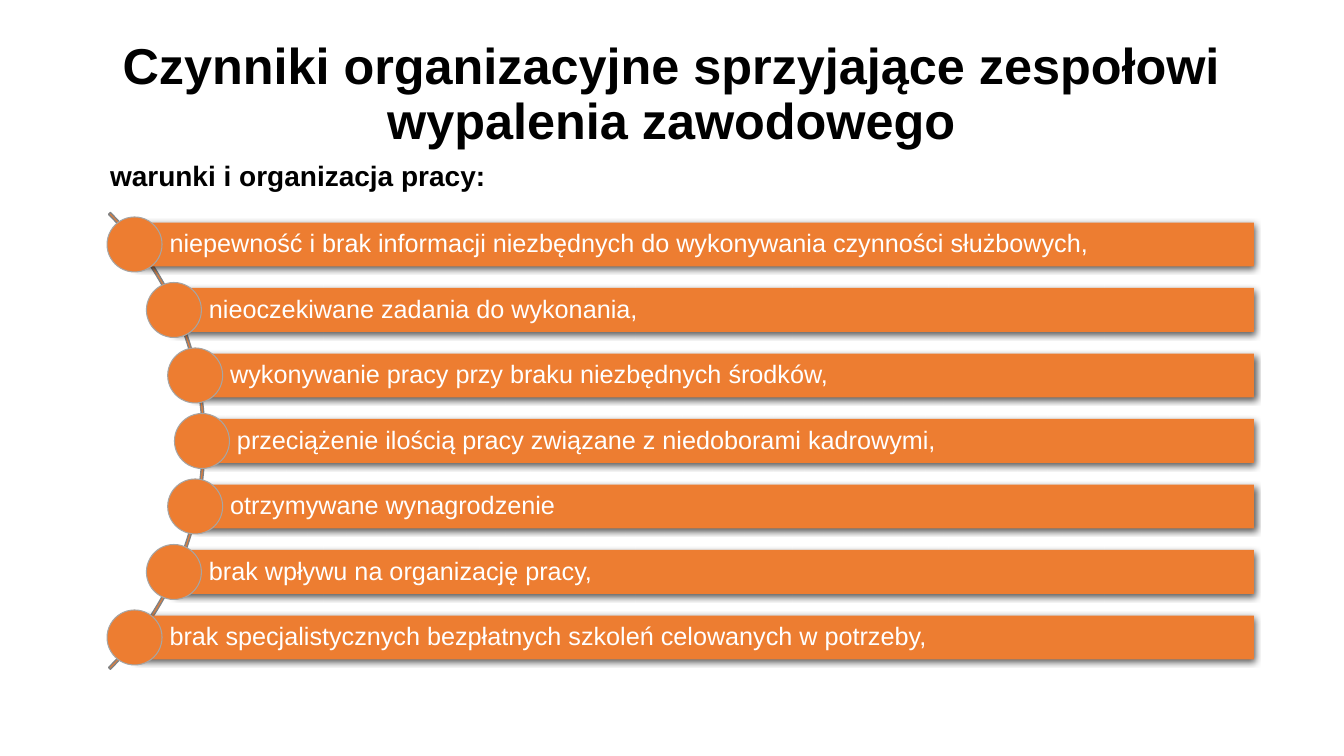
from dataclasses import dataclass
from math import sqrt

from lxml import etree
from pptx import Presentation, util as u
from pptx.dml.color import RGBColor
from pptx.enum import shapes, text
from pptx.oxml import ns

PX = 914400 / 100.8


@dataclass(frozen=True)
class Theme:
    font: str = "Arial"
    ink: str = "000000"
    paper: str = "FFFFFF"
    fill: str = "ED7D31"
    ring: str = "A5A5A5"
    arc: str = "828282"
    title: int = 36
    lead: int = 20
    item: int = 18


T = Theme()
TITLE = "Czynniki organizacyjne sprzyjające zespołowi wypalenia zawodowego"
LEAD = "warunki i organizacja pracy:"
ITEMS = [
    "niepewność i brak informacji niezbędnych do wykonywania czynności służbowych,",
    "nieoczekiwane zadania do wykonania,",
    "wykonywanie pracy przy braku niezbędnych środków,",
    "przeciążenie ilością pracy związane z niedoborami kadrowymi,",
    "otrzymywane wynagrodzenie",
    "brak wpływu na organizację pracy,",
    "brak specjalistycznych bezpłatnych szkoleń celowanych w potrzeby,",
]


def px(n):
    return u.Emu(round(n * PX))


def rgb(code):
    return RGBColor.from_string(code)


def put(shape, words, size, color=T.ink, bold=False, align=text.PP_ALIGN.LEFT,
        anchor=text.MSO_ANCHOR.MIDDLE, pads=(10, 5, 10, 5)):
    """Write one paragraph into a shape."""
    frame = shape.text_frame
    frame.word_wrap = True
    frame.auto_size = text.MSO_AUTO_SIZE.NONE
    frame.vertical_anchor = anchor
    (frame.margin_left, frame.margin_top,
     frame.margin_right, frame.margin_bottom) = map(px, pads)
    frame.text = words
    para = frame.paragraphs[0]
    para.alignment, para.line_spacing = align, 0.9
    para.space_before = u.Pt(0)
    font = para.font
    font.name, font.size, font.bold = T.font, u.Pt(size), bold
    font.color.rgb = rgb(color)
    return para


def place(shape, box):
    shape.left, shape.top, shape.width, shape.height = map(px, box)


def draw(slide, kind, box, line=None, width=1):
    shape = slide.shapes.add_shape(kind, *map(px, box))
    shape.shadow.inherit = False
    shape.fill.solid()
    shape.fill.fore_color.rgb = rgb(T.fill)
    if line:
        shape.line.color.rgb = rgb(line)
        shape.line.width = u.Pt(width)
    else:
        shape.line.fill.background()
    return shape


def shade(shape):
    """Drop a soft shadow straight down."""
    effects = shape._element.spPr.find(ns.qn("a:effectLst"))
    drop = etree.SubElement(effects, ns.qn("a:outerShdw"), blurRad="57150",
                            dist="19050", dir="5400000", algn="ctr", rotWithShape="0")
    tint = etree.SubElement(drop, ns.qn("a:srgbClr"), val=T.ink)
    etree.SubElement(tint, ns.qn("a:alpha"), val="63000")


def head(slide, box):
    title = slide.shapes.title
    place(title, box)
    put(title, TITLE, T.title, bold=True, align=text.PP_ALIGN.CENTER)


def lead(slide, box):
    body = slide.placeholders[1]
    place(body, box)
    para = put(body, LEAD, T.lead, bold=True, anchor=text.MSO_ANCHOR.TOP)
    props = para._p.get_or_add_pPr()
    props.set("marL", "0")
    props.set("indent", "0")
    # Bullet choice precedes the default run properties
    mark = etree.Element(ns.qn("a:buNone"))
    props.find(ns.qn("a:defRPr")).addprevious(mark)


def curve(slide, box):
    """Stack bars whose left ends follow an arc."""
    left, top, width, height = box
    bar, dot, ray = 44, 55, 320
    mid = top + height / 2
    hub = left - 225

    # Arc behind the bars
    side = 2 * ray + 6
    arc = draw(slide, shapes.MSO_SHAPE.BLOCK_ARC,
               (hub - side / 2, mid - side / 2, side, side), T.arc)
    for i, value in enumerate((189, 27, 0.004)):
        arc.adjustments[i] = value

    # Bars with a dot on each left end
    step = (height - dot) / (len(ITEMS) - 1)
    for i, words in enumerate(ITEMS):
        y = top + dot / 2 + i * step
        x = hub + sqrt(ray ** 2 - (y - mid) ** 2)
        strip = draw(slide, shapes.MSO_SHAPE.RECTANGLE,
                     (x, y - bar / 2, left + width - x, bar))
        shade(strip)
        put(strip, words, T.item, T.paper, pads=(35, 6, 6, 6))
        draw(slide, shapes.MSO_SHAPE.OVAL,
             (x - dot / 2, y - dot / 2, dot, dot), T.ring, 0.75)


def main():
    deck = Presentation()
    deck.slide_width, deck.slide_height = px(1344), px(756)
    slide = deck.slides.add_slide(deck.slide_layouts[1])
    head(slide, (92, 34, 1159, 123))
    lead(slide, (100, 157, 1145, 53))
    curve(slide, (107, 217, 1147, 448))
    deck.save("out.pptx")


if __name__ == "__main__":
    main()
